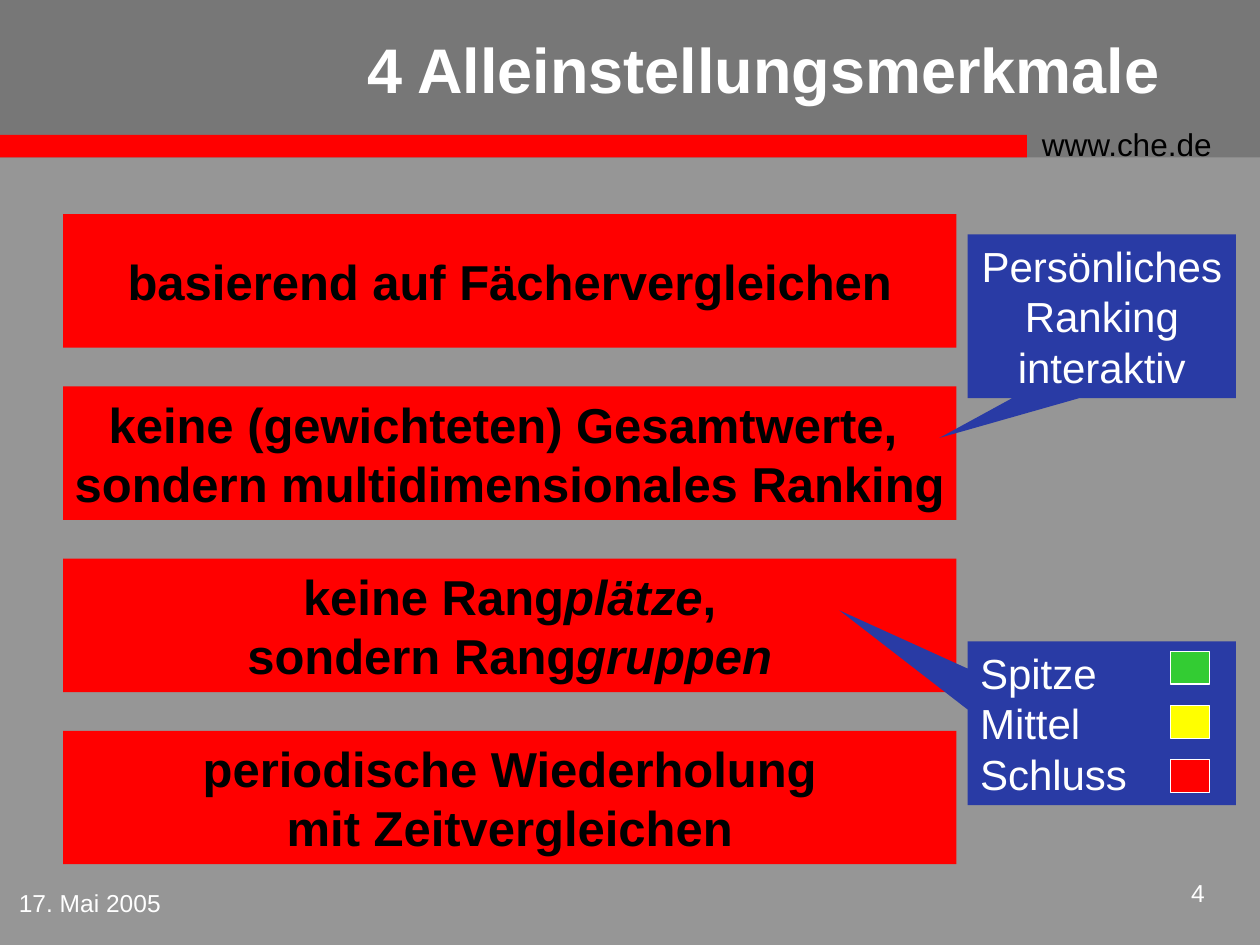
from pptx import Presentation
from pptx.dml.color import RGBColor
from pptx.enum import shapes as sh, text as tx
from pptx.util import Inches, Pt

RED, BLUE, WHITE, BLACK = "FF0000", "293BA5", "FFFFFF", "000000"
LEFT, MID, RIGHT = tx.PP_ALIGN.LEFT, tx.PP_ALIGN.CENTER, tx.PP_ALIGN.RIGHT
RECT, CALL = sh.MSO_SHAPE.RECTANGLE, sh.MSO_SHAPE.RECTANGULAR_CALLOUT


def paint(item, color):
    """Give a fill a solid colour."""
    item.solid()
    item.fore_color.rgb = RGBColor.from_string(color)


def place(box):
    """Turn a box in inches into lengths."""
    return [Inches(n) for n in box]


def block(parent, box, color, kind=RECT, edge=None):
    """Add a filled shape with an optional thin edge."""
    shape = parent.add_shape(kind, *place(box))
    shape.shadow.inherit = False
    paint(shape.fill, color)
    if edge:
        paint(shape.line.fill, edge)
        shape.line.width = Pt(0.75)
    else:
        shape.line.fill.background()
    return shape


def write(shape, lines, size, color, align=LEFT, bold=False,
          anchor=tx.MSO_ANCHOR.TOP, wrap=True):
    """Set lines of text, where every second part of a line is italic."""
    frame = shape.text_frame
    frame.word_wrap = wrap
    frame.auto_size = tx.MSO_AUTO_SIZE.NONE
    frame.vertical_anchor = anchor
    for num, parts in enumerate(lines):
        para = frame.add_paragraph() if num else frame.paragraphs[0]
        para.alignment = align
        for pos, part in enumerate(parts):
            run = para.add_run()
            run.text = part
            font = run.font
            font.name, font.size = "Arial", Pt(size)
            font.bold, font.italic = bold, pos % 2 == 1
            paint(font.fill, color)


def label(slide, box, words, size, color, align=LEFT):
    """Add one line of plain text."""
    shape = slide.shapes.add_textbox(*place(box))
    write(shape, [[words]], size, color, align)
    return shape


def header(slide, box):
    """Draw the band, the red bar, the title and the web address."""
    x, y, w, h = box
    block(slide.shapes, box, "777777")
    bar = block(slide.shapes, (x, y + h - 0.18, 8.15, 0.18), RED)
    title = slide.shapes.title
    title.left, title.top, title.width, title.height = place(
        (x + 2.48, y, 7.16, 1.08))
    write(title, [["4 Alleinstellungsmerkmale"]], 36, WHITE, MID, True,
          tx.MSO_ANCHOR.MIDDLE)
    bar.element.addnext(title.element)
    label(slide, (x + 8.17, y + 0.94, 1.75, 0.4), "www.che.de", 18, BLACK)


def claims(slide, box):
    """Stack the four red boxes at equal steps."""
    x, y, w, h = box
    items = [
        [["basierend auf Fächervergleichen"]],
        [["keine (gewichteten) Gesamtwerte, "],
         ["sondern multidimensionales Ranking"]],
        [["keine Rang", "plätze", ","], ["sondern Rang", "gruppen"]],
        [["periodische Wiederholung"], ["mit Zeitvergleichen"]],
    ]
    high = 1.06
    step = (h - high) / (len(items) - 1)
    for num, lines in enumerate(items):
        shape = block(slide.shapes, (x, y + num * step, w, high), RED)
        write(shape, lines, 28, BLACK, MID, True, tx.MSO_ANCHOR.MIDDLE, False)


def callout(parent, box, tip, lines, align):
    """Add a blue callout whose tip points to a claim."""
    shape = block(parent, box, BLUE, CALL)
    for num, value in enumerate(tip):
        shape.adjustments[num] = value
    write(shape, lines, 24, WHITE, align)


def legend(slide, box):
    """Group the rank callout with its colour keys."""
    x, y, w, h = box
    parts = slide.shapes.add_group_shape().shapes
    callout(parts, box, (-0.978, -0.689),
            [["Spitze"], ["Mittel"], ["Schluss"]], LEFT)
    for num, color in enumerate(("33CC33", "FFFF00", RED)):
        key = (x + 1.61, y + 0.08 + num * 0.43, 0.31, 0.26)
        block(parts, key, color, edge=WHITE)


def footer(slide, box):
    """Write the date and the page number."""
    x, y, w, h = box
    date = label(slide, (x, y + 0.08, 2.4, 0.5), "17. Mai 2005", 14, WHITE)
    date.text_frame.margin_left = Inches(0.15)
    label(slide, (x + w - 0.92, y, 0.58, 0.42), "4", 14, WHITE, RIGHT)


def main():
    """Build the slide and save it."""
    deck = Presentation()
    deck.slide_width, deck.slide_height = Inches(10), Inches(7.5)
    slide = deck.slides.add_slide(deck.slide_layouts[5])
    paint(slide.background.fill, "969696")
    header(slide, (0, 0, 10, 1.25))
    footer(slide, (0, 6.92, 10, 0.58))
    claims(slide, (0.5, 1.7, 7.09, 5.16))
    callout(slide.shapes, (7.68, 1.86, 2.13, 1.3), (-0.605, 0.743),
            [["Persönliches Ranking"], ["interaktiv"]], MID)
    legend(slide, (7.68, 5.09, 2.13, 1.3))
    deck.save("out.pptx")


if __name__ == "__main__":
    main()
